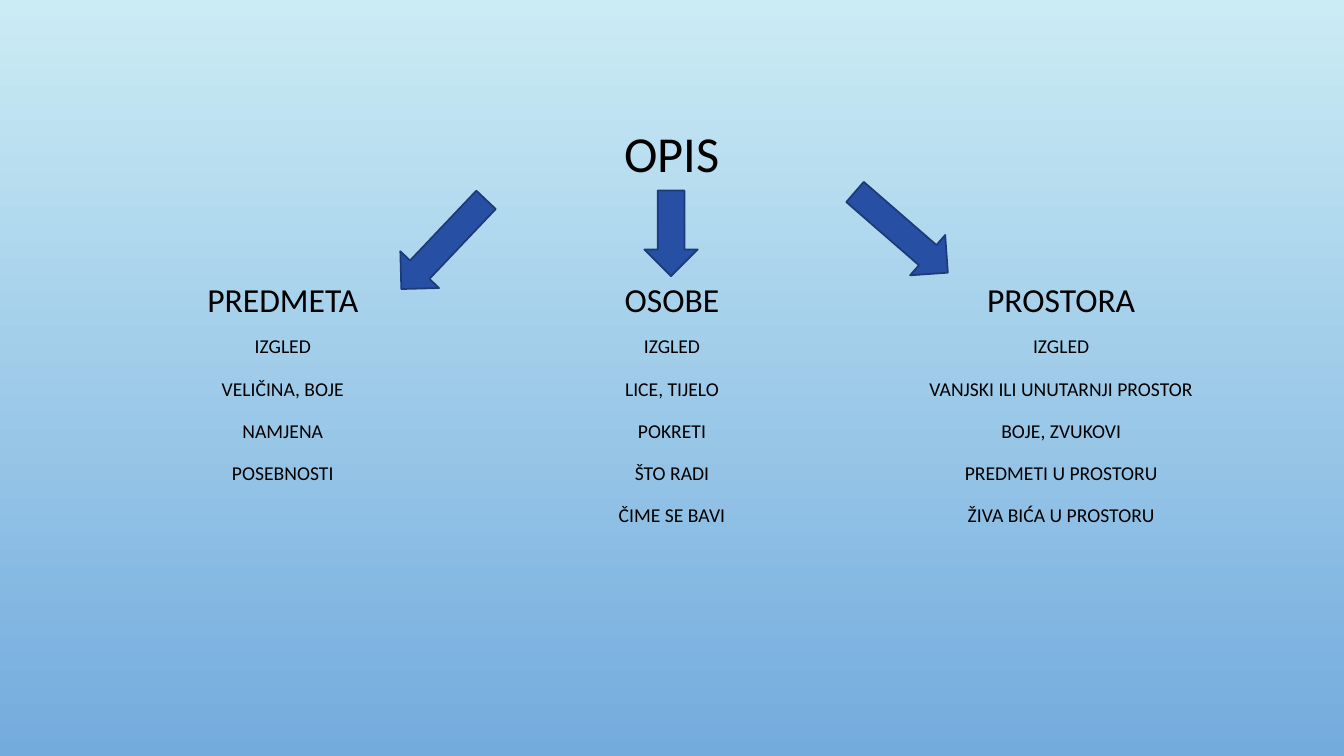
from pptx import Presentation
from pptx.dml.color import RGBColor
from pptx.enum.shapes import MSO_SHAPE
from pptx.enum.text import MSO_ANCHOR, PP_ALIGN
from pptx.util import Inches, Pt

ARROW = MSO_SHAPE.RIGHT_ARROW
TOP, MIDDLE, BOTTOM = MSO_ANCHOR.TOP, MSO_ANCHOR.MIDDLE, MSO_ANCHOR.BOTTOM
CENTER = PP_ALIGN.CENTER

COLUMN_LEFT, COLUMN_STEP, COLUMN_WIDTH = 1, 3.86, 3.61
COLUMNS = [
    ("PREDMETA", ["IZGLED", "VELIČINA, BOJE", "NAMJENA", "POSEBNOSTI"]),
    ("OSOBE", ["IZGLED", "LICE, TIJELO", "POKRETI", "ŠTO RADI", "ČIME SE BAVI"]),
    ("PROSTORA", ["IZGLED", "VANJSKI ILI UNUTARNJI PROSTOR", "BOJE, ZVUKOVI",
                  "PREDMETI U PROSTORU", "ŽIVA BIĆA U PROSTORU"]),
]
# left, top, length, rotation
ARROWS = [(3.79, 2.16, 1.22, 133.5), (8.33, 2.04, 1.22, 41), (6.23, 2.05, 0.85, 90)]
ARROW_THICKNESS = 0.53


def color(value):
    return RGBColor.from_string(value)


class SlideBuilder:
    font = "Calibri"
    ink = "000000"
    arrow_fill = "274FA4"
    arrow_line = "1D3A79"
    sky = ("CBECF5", "73ABDD")

    def __init__(self, s):
        self.s = s

    def background(self):
        fill = self.s.background.fill
        fill.gradient()
        fill.gradient_angle = 270
        for stop, value in zip(fill.gradient_stops, self.sky):
            stop.color.rgb = color(value)

    def text(self, left, top, width, height, lines, size, spacing, anchor=TOP):
        box = self.s.shapes.add_textbox(Inches(left), Inches(top),
                                        Inches(width), Inches(height))
        tf = box.text_frame
        tf.word_wrap = True
        tf.vertical_anchor = anchor
        for i, line in enumerate(lines):
            p = tf.add_paragraph() if i else tf.paragraphs[0]
            p.alignment = CENTER
            p.line_spacing = spacing
            p.space_before = Pt(10 if i else 0)
            r = p.add_run()
            r.text = line
            r.font.name = self.font
            r.font.size = Pt(size)
            r.font.color.rgb = color(self.ink)

    def arrow(self, left, top, length, rotation):
        sp = self.s.shapes.add_shape(ARROW, Inches(left), Inches(top),
                                     Inches(length), Inches(ARROW_THICKNESS))
        sp.rotation = rotation
        sp.shadow.inherit = False
        sp.fill.solid()
        sp.fill.fore_color.rgb = color(self.arrow_fill)
        sp.line.color.rgb = color(self.arrow_line)
        sp.line.width = Pt(1.25)


def main():
    prs = Presentation()
    prs.slide_width, prs.slide_height = Inches(13.33), Inches(7.5)
    slide = SlideBuilder(prs.slides.add_slide(prs.slide_layouts[6]))
    slide.background()
    slide.text(1, 0.67, 11.33, 1.76, ["OPIS"], 36, 0.9, MIDDLE)
    for i, (heading, items) in enumerate(COLUMNS):
        left = COLUMN_LEFT + i * COLUMN_STEP
        slide.text(left, 2.59, COLUMN_WIDTH, 0.63, [heading], 24, 0.85, BOTTOM)
        slide.text(left, 3.22, COLUMN_WIDTH, 3.11, items, 14, 1.2)
    for arrow in ARROWS:
        slide.arrow(*arrow)
    prs.save("out.pptx")


if __name__ == "__main__":
    main()
